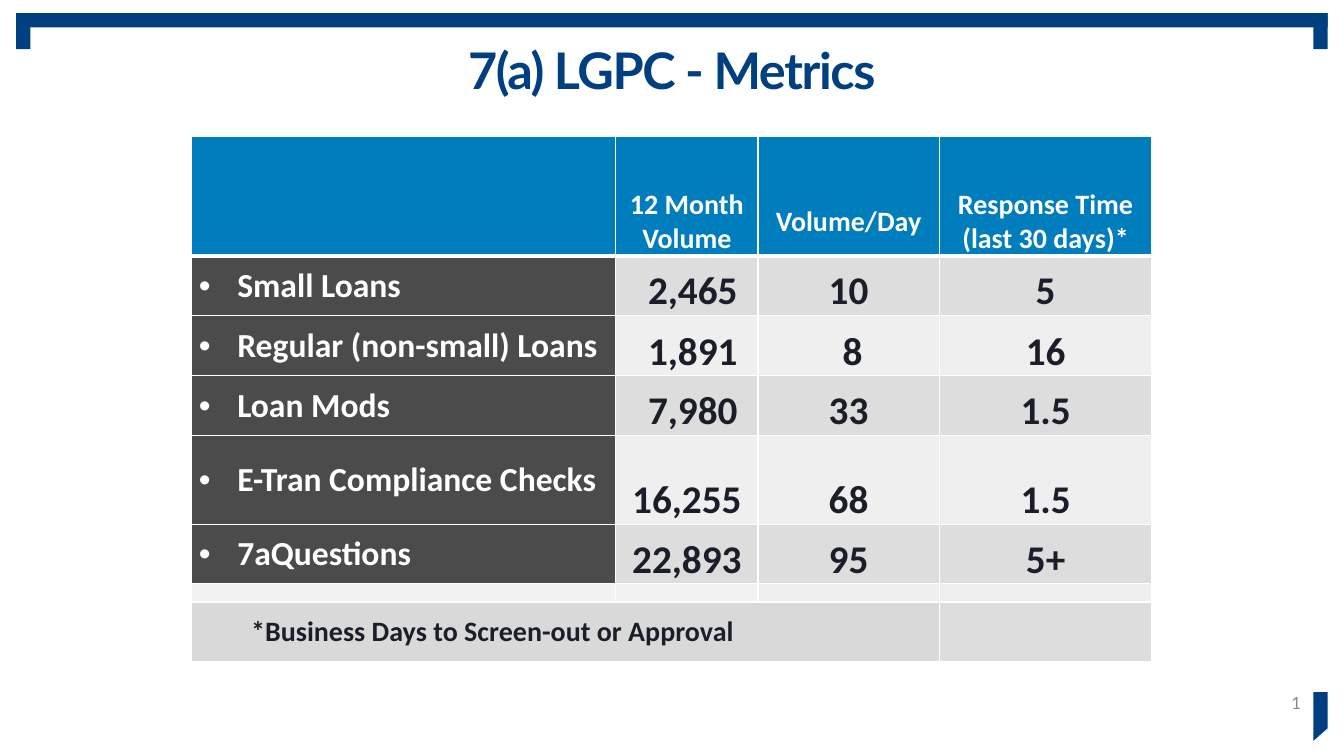
from lxml import etree
from pptx import Presentation
from pptx.dml.color import RGBColor
from pptx.enum import shapes, text
from pptx.oxml import ns
from pptx.util import Cm, Pt

HUES = {
    "navy": "003F80", "blue": "007DBC", "slate": "4B4B4B", "ink": "1B1E29",
    "white": "FFFFFF", "dark": "DDDDDD", "light": "EFEFEF", "pale": "F2F2F2",
    "foot": "D9D9D9", "gray": "8A8A8D",
}
COLS = [10.69, 3.58, 4.57, 5.36]
ROWS = [3.02, 1.5, 1.52, 1.5, 2.24, 1.5, 0.46, 1.5]
HEADS = ["", "12 Month\vVolume", "Volume/Day", "Response Time\v(last 30 days)*"]
LOANS = [
    ("Small Loans", "2,465", "10", "5"),
    ("Regular (non-small) Loans", "1,891", "8", "16"),
    ("Loan Mods", "7,980", "33", "1.5"),
    ("E-Tran Compliance Checks", "16,255", "68", "1.5"),
    ("7aQuestions", "22,893", "95", "5+"),
]
NUDGE = {"2,465": 0.3, "1,891": 0.3, "7,980": 0.3, "8": 0.2}
SIDE = 0.18
ALIGN = text.PP_ALIGN
ANCHOR = text.MSO_ANCHOR


def hue(name):
    return RGBColor.from_string(HUES[name])


def add(node, tag, **attrs):
    child = etree.SubElement(node, ns.qn(tag))
    for key, value in attrs.items():
        child.set(key, str(value))
    return child


def style(font, face, size, color, bold=False):
    font.name, font.size, font.bold = face, Pt(size), bold
    font.color.rgb = hue(color)


def paint(shape):
    shape.shadow.inherit = False
    shape.fill.solid()
    shape.fill.fore_color.rgb = hue("navy")
    shape.line.fill.background()


def frame(slide, left, top, width, height):
    """Top bar with a short tick at each end, and a cut tab at bottom right."""
    thick, tick = 0.36, 0.91
    right = left + width - thick
    for x, w, h in ((left, width, thick), (left, thick, tick), (right, thick, tick)):
        paint(slide.shapes.add_shape(
            shapes.MSO_SHAPE.RECTANGLE, Cm(x), Cm(top), Cm(w), Cm(h)))
    base = top + height
    tab = slide.shapes.build_freeform(Cm(right), Cm(base - 1.23))
    tab.add_line_segments([
        (Cm(right + thick), Cm(base - 1.23)),
        (Cm(right + thick), Cm(base - 0.32)),
        (Cm(right), Cm(base))])
    paint(tab.convert_to_shape())


def title(slide, left, top, width, height):
    body = slide.shapes.add_textbox(Cm(left), Cm(top), Cm(width), Cm(height)).text_frame
    body.word_wrap = True
    para = body.paragraphs[0]
    para.text = "7(a) LGPC - Metrics"
    para.alignment, para.line_spacing = ALIGN.CENTER, 0.9
    run = para.runs[0]
    style(run.font, "Lato", 36, "navy", True)
    run.font._element.set("spc", "-100")


def number(slide, left, top, width, height):
    body = slide.shapes.add_textbox(Cm(left), Cm(top), Cm(width), Cm(height)).text_frame
    body.word_wrap = True
    body.vertical_anchor = ANCHOR.MIDDLE
    body.margin_left = body.margin_right = body.margin_top = body.margin_bottom = 0
    para = body.paragraphs[0]
    para.text = "7"
    para.alignment = ALIGN.RIGHT
    run = para.runs[0]
    style(run.font, "Lato", 12, "gray")
    run._r.tag = ns.qn("a:fld")
    run._r.set("id", "{B6F15528-21DE-4FAA-801E-634DDDAF4B2B}")
    run._r.set("type", "slidenum")


def rule(cell, top, base):
    """White cell borders, with the top and bottom widths in points."""
    props = cell._tc.get_or_add_tcPr()
    for tag, width in (("a:lnL", 1), ("a:lnR", 1), ("a:lnT", top), ("a:lnB", base)):
        line = add(props, tag, w=Pt(width))
        add(add(line, "a:solidFill"), "a:srgbClr", val=HUES["white"])


def fill(cell, color, top=1, base=1):
    rule(cell, top, base)
    cell.fill.solid()
    cell.fill.fore_color.rgb = hue(color)
    cell.margin_left = cell.margin_right = Cm(SIDE)
    cell.margin_top = cell.margin_bottom = 0


def write(cell, words, size, color, align=ALIGN.CENTER, anchor=ANCHOR.BOTTOM):
    cell.vertical_anchor = anchor
    para = cell.text_frame.paragraphs[0]
    para.text = words
    para.alignment = align
    for run in para.runs:
        style(run.font, "Calibri", size, color, True)
    return para


def bullet(para):
    props = para._p.get_or_add_pPr()
    props.set("marL", str(Cm(0.97)))
    props.set("indent", str(-Cm(0.97)))
    add(props, "a:buFont", typeface="Arial")
    add(props, "a:buChar", char="•")


def metrics(slide, left, top):
    grid = slide.shapes.add_table(
        len(ROWS), len(COLS), Cm(left), Cm(top), Cm(sum(COLS)), Cm(sum(ROWS))).table
    grid.first_row = grid.horz_banding = False
    for col, width in zip(grid.columns, COLS):
        col.width = Cm(width)
    for row, height in zip(grid.rows, ROWS):
        row.height = Cm(height)

    for c, words in enumerate(HEADS):
        cell = grid.cell(0, c)
        fill(cell, "blue", base=3)
        if words:
            write(cell, words, 20, "white")
    grid.cell(0, 2).margin_bottom = Cm(0.42)

    for r, (name, *counts) in enumerate(LOANS, 1):
        cell = grid.cell(r, 0)
        fill(cell, "slate", top=3 if r == 1 else 1)
        bullet(write(cell, name, 24, "white", ALIGN.LEFT, ANCHOR.MIDDLE))
        for c, count in enumerate(counts, 1):
            cell = grid.cell(r, c)
            fill(cell, "dark" if r % 2 else "light", top=3 if r == 1 else 1)
            write(cell, count, 28, "ink")
            cell.margin_left = Cm(SIDE + NUDGE.get(count, 0))

    gap, last = len(ROWS) - 2, len(ROWS) - 1
    for c, color in enumerate(("pale", "pale", "light", "light")):
        cell = grid.cell(gap, c)
        fill(cell, color)
        add(cell.text_frame.paragraphs[0]._p, "a:endParaRPr", sz=800)

    grid.cell(last, 0).merge(grid.cell(last, 2))
    for c, color in enumerate(("foot", "foot", "foot", "dark")):
        fill(grid.cell(last, c), color)
    note = write(grid.cell(last, 0), "*Business Days to Screen-out or Approval",
                 20, "ink", ALIGN.LEFT, ANCHOR.MIDDLE)
    note._p.get_or_add_pPr().set("indent", str(Cm(1.32)))


def main():
    deck = Presentation()
    deck.slide_width, deck.slide_height = Cm(33.87), Cm(19.05)
    slide = deck.slides.add_slide(deck.slide_layouts[6])
    frame(slide, 0.41, 0.33, 33.05, 18.34)
    title(slide, 1.69, 1.04, 30.48, 2.06)
    number(slide, 25.17, 17.2, 7.62, 1.02)
    metrics(slide, 4.83, 3.43)
    deck.save("out.pptx")


if __name__ == "__main__":
    main()
